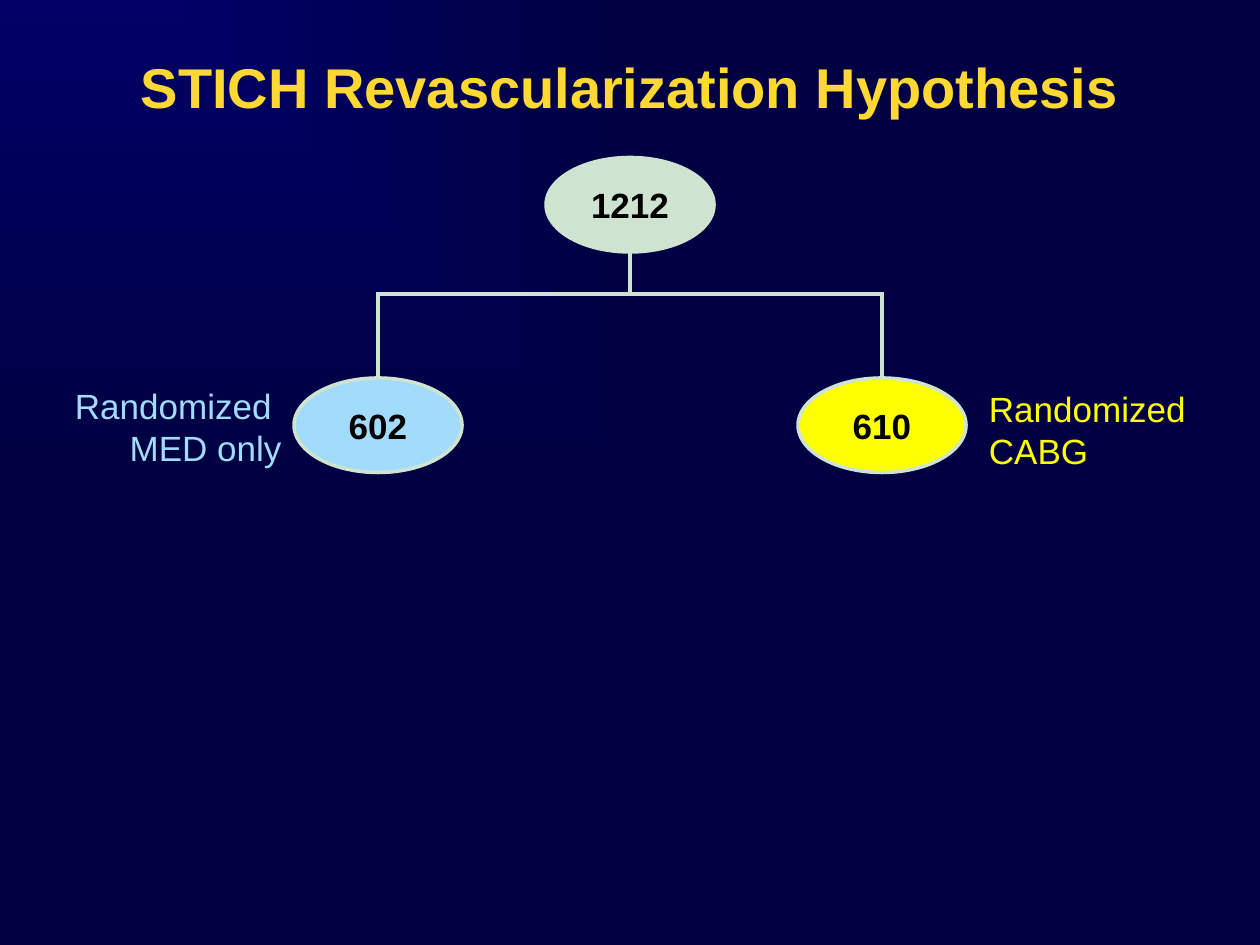
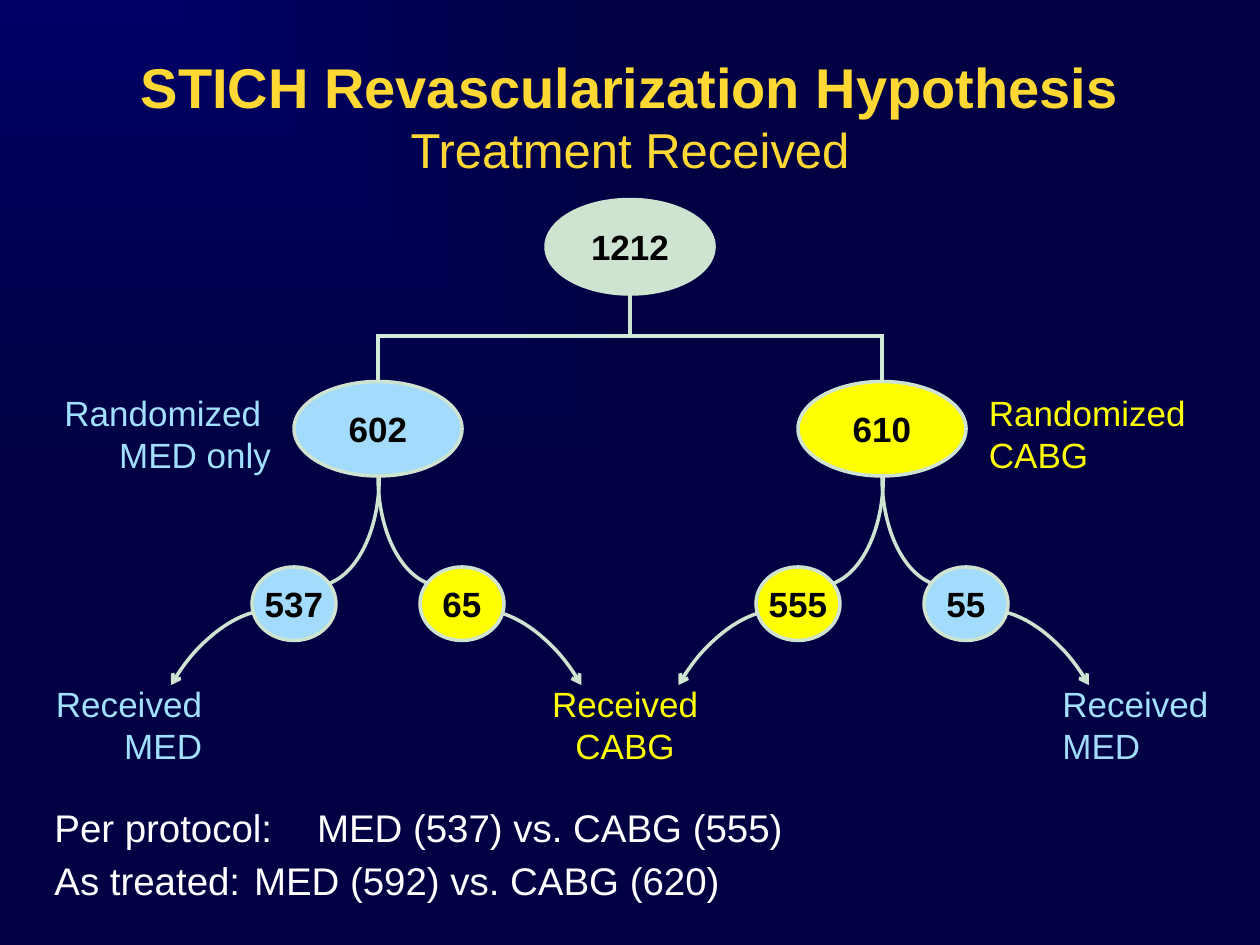
from pptx import Presentation
from pptx.dml.color import RGBColor
from pptx.enum.shapes import MSO_CONNECTOR as Link, MSO_SHAPE as Shape
from pptx.enum.text import MSO_ANCHOR as Anchor, PP_ALIGN as Align
from pptx.oxml.ns import qn
from pptx.util import Pt
from lxml import etree

FONT = "Arial"
GLOW = RGBColor(0x00, 0x00, 0x66)
NAVY = RGBColor(0x00, 0x00, 0x43)
GOLD = RGBColor(0xFF, 0xD8, 0x33)
SAGE = RGBColor(0xCF, 0xE4, 0xD0)
MINT = RGBColor(0xD1, 0xEB, 0xD7)
BLUE = RGBColor(0xA2, 0xDB, 0xFB)
SKY = RGBColor(0xA1, 0xE0, 0xFE)
YELLOW = RGBColor(0xFF, 0xFF, 0x00)
WHITE = RGBColor(0xFF, 0xFF, 0xFF)
BLACK = RGBColor(0x00, 0x00, 0x00)

MIDDLE = 360
MED_X, CABG_X = 216, 504      # centre lines of the two arms
OVAL_W, OVAL_H = 96, 54
DOT_W, DOT_H = 48, 42


def add_span(para, text, size, colour, bold=False):
    span = para.add_run()
    span.text = text
    span.font.name = FONT
    span.font.size = Pt(size)
    span.font.bold = bold
    span.font.color.rgb = colour


def add_text_box(page, left, top, width, height, inset=True):
    box = page.shapes.add_textbox(Pt(left), Pt(top), Pt(width), Pt(height))
    frame = box.text_frame
    frame.word_wrap = True
    if not inset:
        clear_margins(frame)
    return frame


def clear_margins(frame):
    frame.margin_left = frame.margin_right = Pt(0)
    frame.margin_top = frame.margin_bottom = Pt(0)


def add_label(page, left, top, width, lines, align=Align.LEFT):
    """Stack (text, colour) lines in one box."""
    frame = add_text_box(page, left, top, width, 55.5)
    for index, (text, colour) in enumerate(lines):
        para = frame.add_paragraph() if index else frame.paragraphs[0]
        para.alignment = align
        add_span(para, text, 20, colour)


def add_count(page, centre, top, width, height, number, fill):
    """Oval holding a patient count."""
    oval = page.shapes.add_shape(
        Shape.OVAL, Pt(centre - width / 2), Pt(top), Pt(width), Pt(height))
    oval.shadow.inherit = False
    oval.fill.solid()
    oval.fill.fore_color.rgb = fill
    oval.line.color.rgb = SAGE
    oval.line.width = Pt(2)
    frame = oval.text_frame
    clear_margins(frame)
    frame.word_wrap = False
    frame.vertical_anchor = Anchor.MIDDLE
    para = frame.paragraphs[0]
    para.alignment = Align.CENTER
    add_span(para, str(number), 20, BLACK, bold=True)


def add_line(page, x1, y1, x2, y2, colour):
    line = page.shapes.add_connector(Link.STRAIGHT, Pt(x1), Pt(y1), Pt(x2), Pt(y2))
    line.line.color.rgb = colour
    line.line.width = Pt(2.25)
    etree.SubElement(line._element.spPr, qn("a:effectLst"))


def add_arc(page, left, top, width, height, turn, flip=False, arrow=False):
    arc = page.shapes.add_shape(Shape.ARC, Pt(left), Pt(top), Pt(width), Pt(height))
    arc.shadow.inherit = False
    arc.fill.background()
    arc.line.color.rgb = SAGE
    arc.line.width = Pt(2)
    arc.rotation = turn
    properties = arc._element.spPr
    if flip:
        properties.find(qn("a:xfrm")).set("flipH", "1")
    if arrow:
        etree.SubElement(properties.find(qn("a:ln")), qn("a:tailEnd"), type="arrow")


def add_page(deck, subtitle=None):
    """Blank page with the corner glow and the shared title."""
    page = deck.slides.add_slide(deck.slide_layouts[6])
    fill = page.background.fill
    fill.gradient()
    for stop, colour, position in zip(fill.gradient_stops, (GLOW, NAVY), (0, 1)):
        stop.color.rgb = colour
        stop.position = position
    gradient = page._element.find(".//" + qn("a:gradFill"))
    gradient.remove(gradient.find(qn("a:lin")))
    shade = etree.SubElement(gradient, qn("a:path"), path="rect")
    etree.SubElement(shade, qn("a:fillToRect"), r="100000", b="100000")

    frame = add_text_box(page, 36, 30, 648, 73 if subtitle else 39, inset=False)
    para = frame.paragraphs[0]
    para.alignment = Align.CENTER
    add_span(para, "STICH Revascularization Hypothesis", 32, GOLD, bold=True)
    if subtitle:
        para.add_line_break()
        add_span(para, subtitle, 28, GOLD)
    return page


def add_randomization(page, top, arm_top, bar_colour):
    """All patients at the top, split into the two arms."""
    bar = top + OVAL_H + 24
    add_count(page, MIDDLE, top, OVAL_W, OVAL_H, 1212, SAGE)
    add_line(page, MIDDLE, top + OVAL_H, MIDDLE, bar, SAGE)
    add_line(page, MED_X, bar, CABG_X, bar, bar_colour)
    for centre, number, fill in ((MED_X, 602, BLUE), (CABG_X, 610, YELLOW)):
        add_line(page, centre, bar - 1, centre, arm_top + 4, bar_colour)
        add_count(page, centre, arm_top, OVAL_W, OVAL_H, number, fill)


def add_arm_labels(page, med_left, med_top, cabg_top, med_colour):
    add_label(page, med_left, med_top, 144,
              [("Randomized ", med_colour), ("MED only", med_colour)], Align.RIGHT)
    add_label(page, 558, cabg_top, 144, [("Randomized", YELLOW), ("CABG", YELLOW)])


def add_crossover(page, centre, arrow_centre, top, counts):
    """Two curved branches below an arm, each through a count to an arrow."""
    for side, (number, fill) in zip((-1, 1), counts):
        is_left = side < 0
        add_arc(page, centre - 72 if is_left else centre, top,
                72.7, 124.6, 180, flip=is_left)
        add_arc(page, arrow_centre + side * 82 - 40.7, top + 132.5, 81.4, 138.2,
                30 if is_left else 330, flip=is_left, arrow=True)
        add_count(page, centre + side * 48, top + 113.8, DOT_W, DOT_H, number, fill)


def add_received_labels(page, top):
    add_label(page, 24, top, 98.6, [("Received ", SKY), ("MED", SKY)], Align.RIGHT)
    add_label(page, 282, top, 156, [("Received ", YELLOW), ("CABG ", YELLOW)],
              Align.CENTER)
    add_label(page, 600, top, 98.6, [("Received", SKY), ("MED", BLUE)])


def add_summary(page, left, top):
    rows = ("Per protocol:\t MED (537) vs. CABG (555)",
            "As treated:\t MED (592) vs. CABG (620)")
    for index, text in enumerate(rows):
        frame = add_text_box(page, left, top + index * 30.2, 464.4, 34)
        add_span(frame.paragraphs[0], text, 22, WHITE)


def build_hypothesis(deck):
    page = add_page(deck)
    add_randomization(page, 90, 216, SAGE)
    add_arm_labels(page, 24, 216, 218, BLUE)


def build_treatment(deck):
    page = add_page(deck, "Treatment Received")
    add_crossover(page, MED_X, MED_X - 1, 210.2, ((537, BLUE), (65, YELLOW)))
    add_crossover(page, CABG_X, CABG_X + 1, 210.2, ((555, YELLOW), (55, BLUE)))
    add_randomization(page, 114, 218, MINT)
    add_arm_labels(page, 18, 220, 220, SKY)
    add_received_labels(page, 386.6)
    add_summary(page, 24, 456)


def main():
    deck = Presentation()
    deck.slide_width, deck.slide_height = Pt(720), Pt(540)
    build_hypothesis(deck)
    build_treatment(deck)
    deck.save("out.pptx")


if __name__ == "__main__":
    main()
